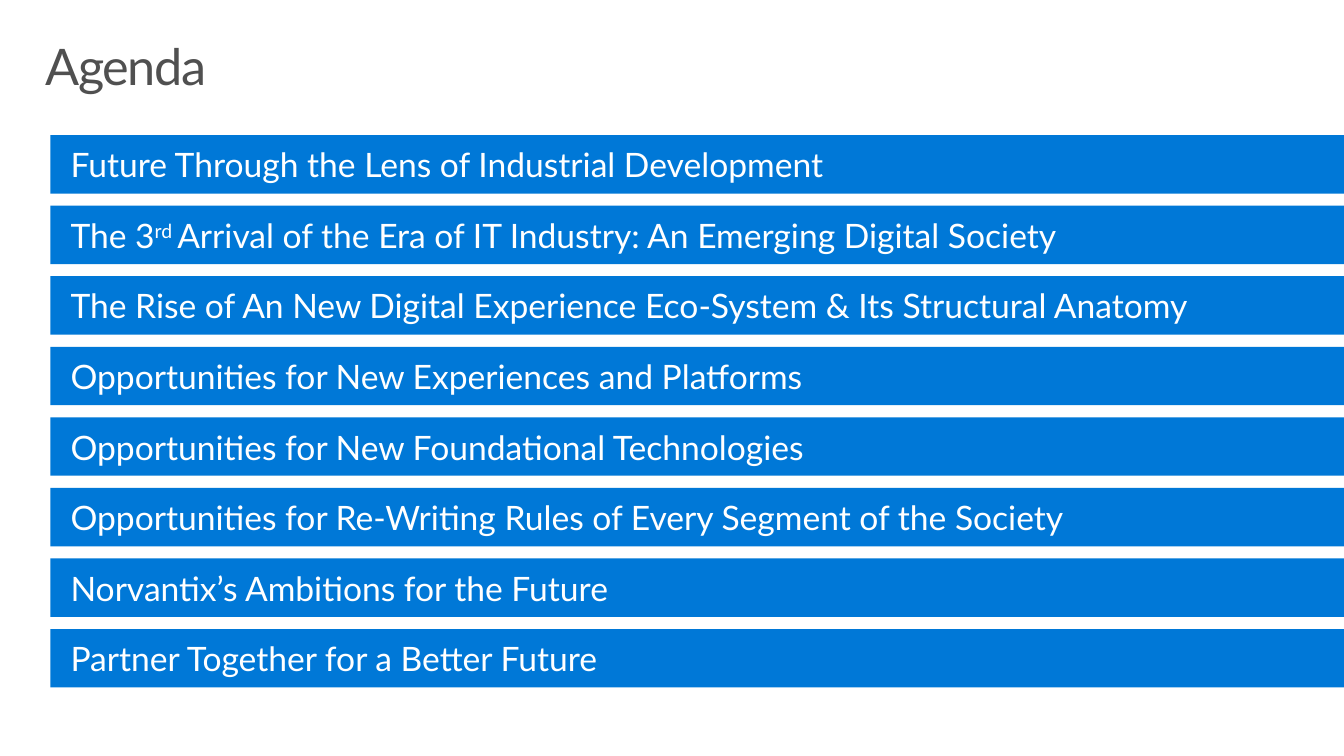
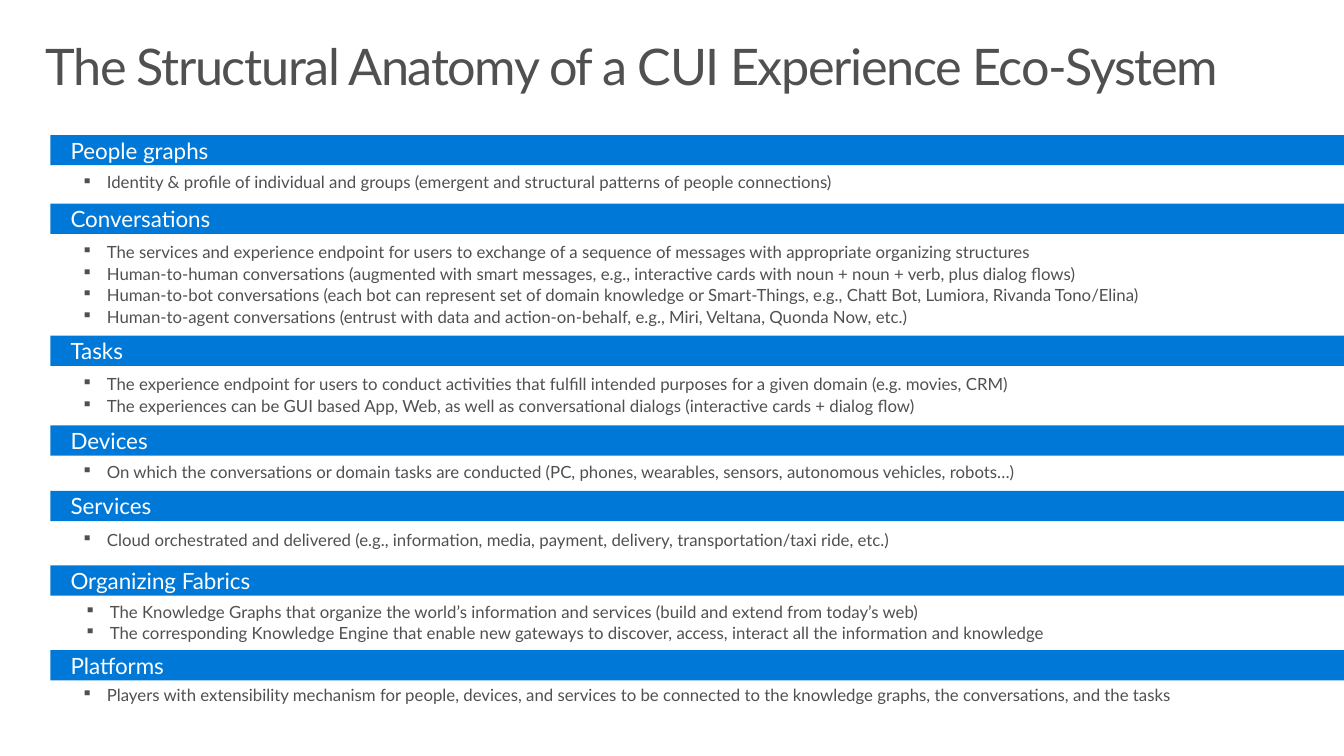
from lxml.etree import SubElement
from pptx import Presentation
from pptx.dml.color import RGBColor
from pptx.enum.shapes import MSO_SHAPE as SHAPE
from pptx.enum.text import MSO_ANCHOR as ANCHOR, PP_ALIGN as ALIGN
from pptx.oxml.ns import qn
from pptx.util import Inches, Pt

FONT, BLUE, GREY, WHITE = "Lato", "0078D7", "505050", "FFFFFF"
TITLE = {"size": 36, "color": GREY, "spc": -100}
AGENDA_BAND = {"size": 24, "color": WHITE}
SECTION_BAND = {"size": 16, "color": WHITE}
NOTE = {"size": 12, "color": GREY}
LEFT, BAND_W, NOTE_W = 0.5, 12.83, 11.79
AGENDA_TOP, AGENDA_PITCH, AGENDA_H, SECTION_H = 1.34, 0.7, 0.58, 0.3
SUPER = {"baseline": 30000}

AGENDA_TITLE = "Agenda"
AGENDA = [
    [("Future Through the Lens of Industrial Development", {})],
    [("The 3", {}), ("rd ", SUPER),
     ("Arrival of the Era of IT Industry: An Emerging Digital Society", {})],
    [("The Rise of An New Digital Experience Eco-System & Its Structural Anatomy", {})],
    [("Opportunities for New Experiences and Platforms", {})],
    [("Opportunities for New Foundational Technologies", {})],
    [("Opportunities for Re-Writing Rules of Every Segment of the Society", {})],
    [("Norvantix’s Ambitions for the Future", {})],
    [("Partner Together for a Better Future", {})],
]

ANATOMY_TITLE = "The Structural Anatomy of a CUI Experience Eco-System"
# heading, band top, notes left, notes top, notes
SECTIONS = [
    ("People graphs", 1.34, 0.5, 1.64, [
        "Identity & profile of individual and groups (emergent and structural patterns of people connections)"]),
    ("Conversations", 2.02, 0.5, 2.32, [
        "The services and experience endpoint for users to exchange of a sequence of messages with appropriate organizing structures",
        "Human-to-human conversations (augmented with smart messages, e.g., interactive cards with noun + noun + verb, plus dialog flows)",
        "Human-to-bot conversations (each bot can represent set of domain knowledge or Smart-Things, e.g., Chatt Bot, Lumiora, Rivanda Tono/Elina)",
        "Human-to-agent conversations (entrust with data and action-on-behalf, e.g., Miri, Veltana, Quonda Now, etc.)"]),
    ("Tasks", 3.33, 0.5, 3.63, [
        "The experience endpoint for users to conduct activities that fulfill intended purposes for a given domain (e.g. movies, CRM)",
        "The experiences can be GUI based App, Web, as well as conversational dialogs (interactive cards + dialog flow)"]),
    ("Devices", 4.22, 0.5, 4.51, [
        "On which the conversations or domain tasks are conducted (PC, phones, wearables, sensors, autonomous vehicles, robots…)"]),
    ("Services", 4.87, 0.5, 5.19, [
        "Cloud orchestrated and delivered (e.g., information, media, payment, delivery, transportation/taxi ride, etc.)"]),
    ("Organizing Fabrics", 5.61, 0.53, 5.89, [
        "The Knowledge Graphs that organize the world’s information and services (build and extend from today’s web)",
        "The corresponding Knowledge Engine that enable new gateways to discover, access, interact all the information and knowledge"]),
    ("Platforms", 6.45, 0.5, 6.72, [
        "Players with extensibility mechanism for people, devices, and services to be connected to the knowledge graphs, the conversations, and the tasks"]),
]


def rgb(value):
    return RGBColor.from_string(value)


def setup_frame(shape, anchor, *insets):
    tf = shape.text_frame
    tf.word_wrap, tf.vertical_anchor = True, anchor
    for side, inset in zip(("left", "top", "right", "bottom"), insets):
        setattr(tf, "margin_" + side, Inches(inset))
    return tf


def add_run(p, text, style, extra=None):
    r = p.add_run()
    r.text = text
    for name, value in {"name": FONT, "size": Pt(style["size"])}.items():
        setattr(r.font, name, value)
    r.font.color.rgb = rgb(style["color"])
    attributes = dict(extra or {})
    if "spc" in style:
        attributes["spc"] = style["spc"]
    for name, value in attributes.items():
        r._r.get_or_add_rPr().set(name, str(value))


def add_slide(prs, title):
    s = prs.slides.add_slide(prs.slide_layouts[6])
    box = s.shapes.add_textbox(Inches(0.29), Inches(0.32), Inches(12.75), Inches(0.98))
    p = setup_frame(box, ANCHOR.TOP, 0.16, 0.1, 0.16, 0.1).paragraphs[0]
    p.line_spacing = 0.9
    add_run(p, title, TITLE)
    return s


def add_band(s, top, height, runs, style):
    sp = s.shapes.add_shape(SHAPE.RECTANGLE, Inches(LEFT), Inches(top), Inches(BAND_W), Inches(height))
    sp.shadow.inherit = False
    sp.fill.solid()
    sp.fill.fore_color.rgb = rgb(BLUE)
    sp.line.fill.background()
    p = setup_frame(sp, ANCHOR.MIDDLE, 0.2, 0.05, 0.05, 0.05).paragraphs[0]
    p.alignment = ALIGN.LEFT
    for text, extra in runs:
        add_run(p, text, style, extra)


def add_bullet(p):
    pPr = p._p.get_or_add_pPr()
    pPr.set("marL", str(Inches(0.56)))
    pPr.set("indent", str(Inches(-0.25)))
    SubElement(pPr, qn("a:buSzPct")).set("val", "90000")
    SubElement(pPr, qn("a:buChar")).set("char", "▪")


def add_notes(s, left, top, notes):
    height = 0.38 + 0.22 * (len(notes) - 1)
    box = s.shapes.add_textbox(Inches(left), Inches(top), Inches(NOTE_W), Inches(height))
    tf = setup_frame(box, ANCHOR.TOP, 0, 0.1, 0.1, 0.1)
    for i, note in enumerate(notes):
        p = tf.add_paragraph() if i else tf.paragraphs[0]
        add_bullet(p)
        p.line_spacing = 0.9
        p.space_before = Pt(2.5 if i else 0)
        add_run(p, note, NOTE)


def main():
    """Build the agenda and anatomy slides and save them."""
    prs = Presentation()
    prs.slide_width, prs.slide_height = Inches(13.33), Inches(7.5)

    s = add_slide(prs, AGENDA_TITLE)
    for i, runs in enumerate(AGENDA):
        add_band(s, AGENDA_TOP + i * AGENDA_PITCH, AGENDA_H, runs, AGENDA_BAND)

    s = add_slide(prs, ANATOMY_TITLE)
    for heading, band_top, left, notes_top, notes in SECTIONS:
        add_band(s, band_top, SECTION_H, [(heading, {})], SECTION_BAND)
        add_notes(s, left, notes_top, notes)

    prs.save("out.pptx")


if __name__ == "__main__":
    main()
